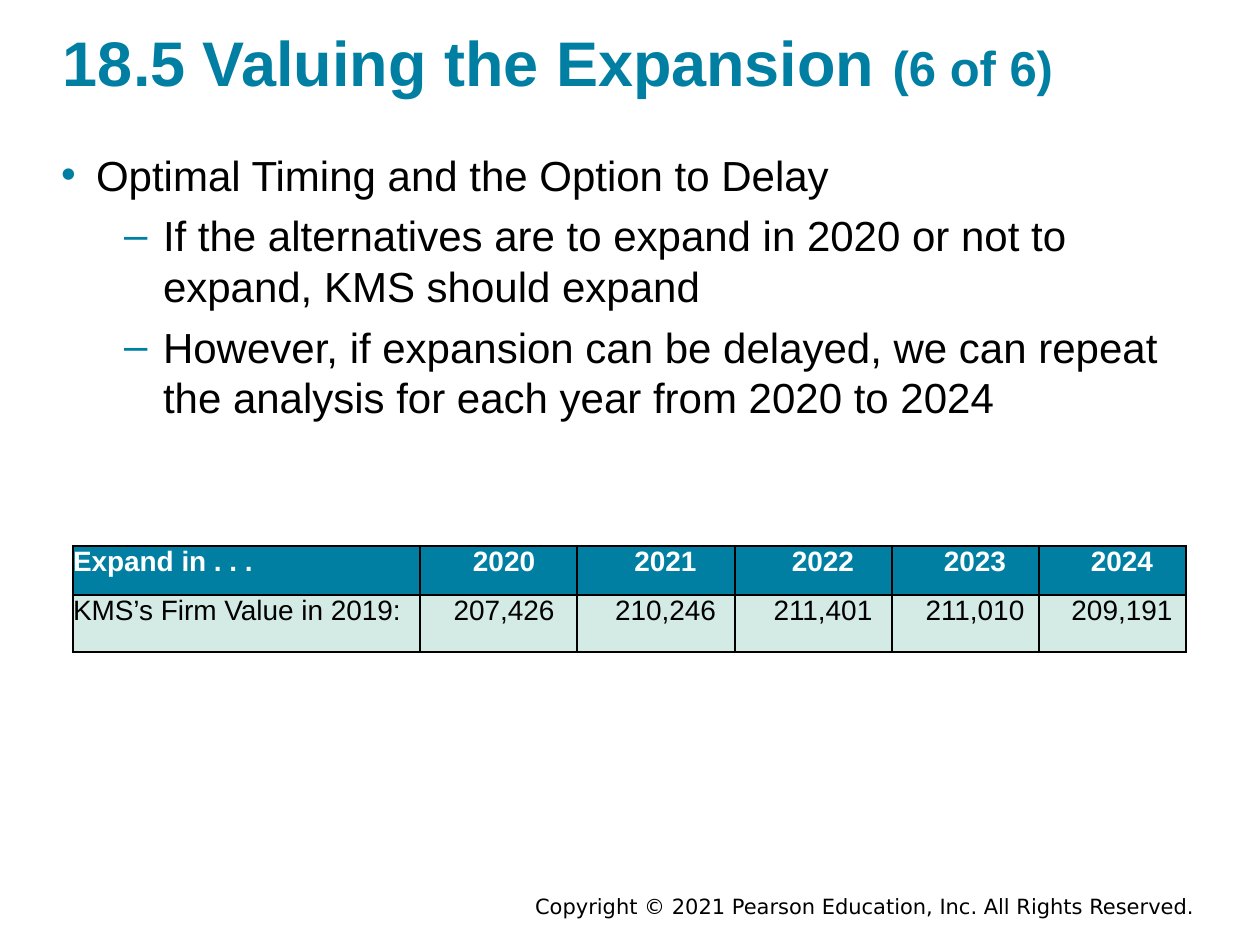
from lxml.etree import SubElement
from pptx import Presentation
from pptx.dml.color import RGBColor
from pptx.enum.text import MSO_ANCHOR as Anchor, PP_ALIGN as Align
from pptx.oxml.ns import qn
from pptx.util import Pt

PX = 914400 / 126
TEAL = RGBColor(0x00, 0x7F, 0xA3)
MINT = RGBColor(0xD4, 0xEA, 0xE4)
BLACK = RGBColor(0x00, 0x00, 0x00)
WHITE = RGBColor(0xFF, 0xFF, 0xFF)

HEADING = [("18.5 Valuing the Expansion ", 36), ("(6 of 6)", 28)]
POINTS = [
    (0, "Optimal Timing and the Option to Delay"),
    (1, "If the alternatives are to expand in 2020 or not to expand, KMS should expand"),
    (1, "However, if expansion can be delayed, we can repeat the analysis for each year from 2020 to 2024"),
]
LEVELS = [("•", 35, 35), ("–", 102, 39)]
FIRM_VALUES = [
    ["Expand in . . .", "2020", "2021", "2022", "2023", "2024"],
    ["KMS’s Firm Value in 2019:", "207,426", "210,246", "211,401", "211,010", "209,191"],
]
ROW_STYLES = [(TEAL, WHITE, True), (MINT, BLACK, False)]
COLUMN_WIDTHS = [347, 157, 158, 157, 147, 147]
COLUMN_INDENTS = [0, 11, 19, 19, 19, 19]
ROW_HEIGHTS = [49, 57]


def px(length):
    """Turn a length in px into EMU."""
    return round(length * PX)


def add_frame(slide, box, inset=0, anchor=Anchor.TOP):
    """Add a wrapping text box and return its text frame."""
    frame = slide.shapes.add_textbox(*map(px, box)).text_frame
    frame.word_wrap = True
    frame.vertical_anchor = anchor
    frame.margin_left = frame.margin_right = px(inset)
    frame.margin_top = frame.margin_bottom = px(inset / 2)
    return frame


def write(paragraph, text, size, color=BLACK, bold=False, font="Arial",
          align=Align.LEFT, indent=0, hang=0, bullet=None, before=0):
    """Append a formatted run to a paragraph and set the paragraph's layout."""
    properties = paragraph._p.get_or_add_pPr()
    if indent:
        properties.set("marL", str(px(indent)))
        properties.set("indent", str(-px(hang)))
    if bullet:
        bullet_color = SubElement(properties, qn("a:buClr"))
        SubElement(bullet_color, qn("a:srgbClr"), val=str(TEAL))
        SubElement(properties, qn("a:buFont"), typeface=font)
        SubElement(properties, qn("a:buChar"), char=bullet)
    paragraph.alignment = align
    paragraph.space_before = Pt(before)
    run = paragraph.add_run()
    run.text = text
    run.font.name = font
    run.font.size = Pt(size)
    run.font.bold = bold
    run.font.color.rgb = color


def add_heading(slide, box):
    """Place the slide heading with its smaller part counter."""
    heading = add_frame(slide, box, anchor=Anchor.MIDDLE).paragraphs[0]
    for text, size in HEADING:
        write(heading, text, size, color=TEAL, bold=True)


def add_points(slide, box):
    """Place the two-level bullet list."""
    frame = add_frame(slide, box)
    for number, (level, text) in enumerate(POINTS):
        point = frame.add_paragraph() if number else frame.paragraphs[0]
        point.level = level
        bullet, indent, hang = LEVELS[level]
        write(point, text, 24, indent=indent, hang=hang, bullet=bullet,
              before=6 if number else 0)


def add_borders(cell):
    """Draw a thin black line on each side of a cell."""
    properties = cell._tc.get_or_add_tcPr()
    for side in ("lnL", "lnR", "lnT", "lnB"):
        line = SubElement(properties, qn(f"a:{side}"), w=str(Pt(1)))
        fill = SubElement(line, qn("a:solidFill"))
        SubElement(fill, qn("a:srgbClr"), val=str(BLACK))


def add_firm_values(slide, left, top):
    """Place the table of firm values by expansion year."""
    table = slide.shapes.add_table(
        len(ROW_HEIGHTS), len(COLUMN_WIDTHS), px(left), px(top),
        px(sum(COLUMN_WIDTHS)), px(sum(ROW_HEIGHTS))).table
    for column, width in zip(table.columns, COLUMN_WIDTHS):
        column.width = px(width)
    for row, height, texts, style in zip(table.rows, ROW_HEIGHTS, FIRM_VALUES, ROW_STYLES):
        row.height = px(height)
        background, color, bold = style
        for cell, text, indent in zip(row.cells, texts, COLUMN_INDENTS):
            add_borders(cell)
            cell.fill.solid()
            cell.fill.fore_color.rgb = background
            cell.margin_left = cell.margin_right = cell.margin_top = cell.margin_bottom = 0
            write(cell.text_frame.paragraphs[0], text, 16, color=color, bold=bold,
                  align=Align.CENTER if indent else Align.LEFT, indent=indent)


def add_copyright(slide, box):
    """Place the copyright line at the foot of the slide."""
    line = add_frame(slide, box, inset=12.6).paragraphs[0]
    write(line, "Copyright © 2021 Pearson Education, Inc. All Rights Reserved.", 12,
          font="DejaVu Sans", align=Align.RIGHT)


def main():
    """Build and save the slide."""
    deck = Presentation()
    deck.slide_width, deck.slide_height = px(1260), px(945)
    slide = deck.slides.add_slide(deck.slide_layouts[6])
    add_copyright(slide, (504, 887, 703, 38))
    add_heading(slide, (63, 14, 1134, 94))
    add_points(slide, (61, 149, 1138, 285))
    add_firm_values(slide, 73, 546)
    deck.save("out.pptx")


if __name__ == "__main__":
    main()
